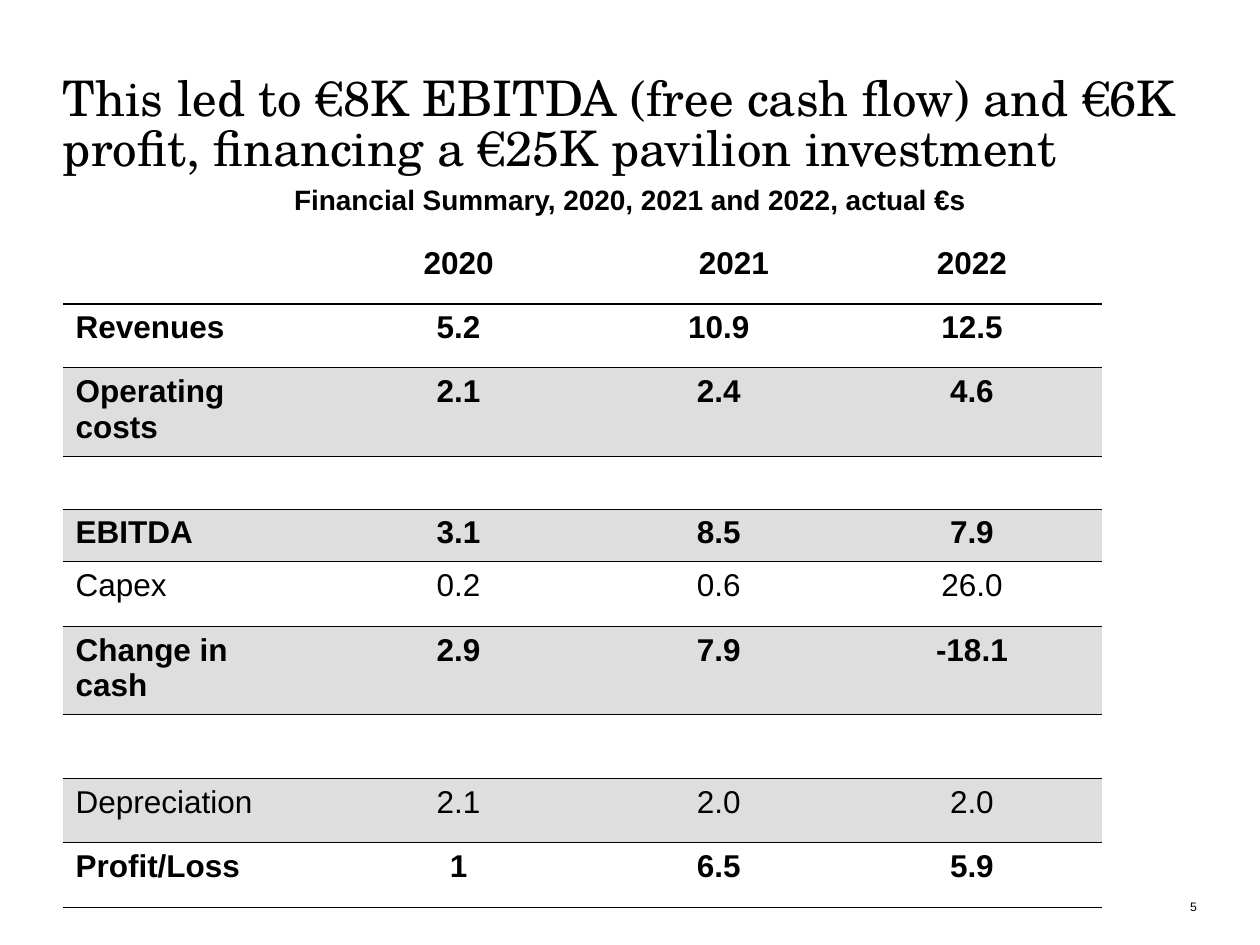
from lxml.etree import SubElement
from pptx import Presentation
from pptx.dml.color import RGBColor
from pptx.enum.text import MSO_ANCHOR as Anchor, PP_ALIGN as Align
from pptx.oxml.ns import qn
from pptx.util import Inches, Pt

BLACK = RGBColor(0x00, 0x00, 0x00)
GREY = RGBColor(0xDE, 0xDE, 0xDE)
SERIF = "TeX Gyre Schola"
SANS = "Arial"
GRID = Inches(0.5)
THIN, THICK = 0.5, 1.5

COLUMN_WIDTHS = [1.81, 2.66, 1.47, 0.23, 2.07]
ROW_HEIGHT, SHORT_ROW_HEIGHT = 0.51, 0.42
SHORT_ROWS = {3, 4}
SHADED_ROWS = {2, 4, 6, 8}
REGULAR_LABELS = {"Capex", "Depreciation"}
FINANCIALS = [
    ["", "2020", "2021", "", "2022"],
    ["Revenues", "5.2", "10.9", "", "12.5"],
    ["Operating costs", "2.1", "2.4", "", "4.6"],
    [""] * 5,
    ["EBITDA", "3.1", "8.5", "", "7.9"],
    ["Capex", "0.2", "0.6", "", "26.0"],
    ["Change in cash", "2.9", "7.9", "", "-18.1"],
    [""] * 5,
    ["Depreciation", "2.1", "2.0", "", "2.0"],
    ["Profit/Loss", "1", "6.5", "", "5.9"],
]


class SlideBuilder:
    def __init__(self, presentation):
        self.slide = presentation.slides.add_slide(presentation.slide_layouts[6])

    def add_text(self, frame, text, size, font=SANS, bold=False, align=Align.LEFT):
        paragraph = frame.paragraphs[0]
        paragraph.alignment = align
        run = paragraph.add_run()
        run.text = text
        run.font.name = font
        run.font.size = Pt(size)
        run.font.bold = bold
        run.font.color.rgb = BLACK
        return paragraph

    def text_box(self, column, row, columns, rows, text, size, anchor=Anchor.TOP, **style):
        box = [round(value * GRID) for value in (column, row, columns, rows)]
        frame = self.slide.shapes.add_textbox(*box).text_frame
        frame.word_wrap = True
        frame.vertical_anchor = anchor
        frame.margin_left = frame.margin_right = 0
        frame.margin_top = frame.margin_bottom = 0
        return self.add_text(frame, text, size, **style)

    def borders(self, cell, top, bottom):
        properties = cell._tc.get_or_add_tcPr()
        for side, width in (("L", 0), ("R", 0), ("T", top), ("B", bottom)):
            line = SubElement(properties, qn(f"a:ln{side}"), w=str(Pt(width)))
            if width:
                fill = SubElement(line, qn("a:solidFill"))
                SubElement(fill, qn("a:srgbClr"), val=str(BLACK))
            else:
                SubElement(line, qn("a:noFill"))

    def table(self, column, row, values):
        heights = [SHORT_ROW_HEIGHT if index in SHORT_ROWS else ROW_HEIGHT
                   for index in range(len(values))]
        table = self.slide.shapes.add_table(
            len(values), len(COLUMN_WIDTHS), round(column * GRID), round(row * GRID),
            Inches(sum(COLUMN_WIDTHS)), Inches(sum(heights))).table
        table.first_row = table.horz_banding = False
        for table_column, width in zip(table.columns, COLUMN_WIDTHS):
            table_column.width = Inches(width)
        for index, (table_row, height, texts) in enumerate(zip(table.rows, heights, values)):
            table_row.height = Inches(height)
            top = (0, THICK)[index] if index < 2 else THIN
            bottom = THIN if index else THICK
            for position, (cell, text) in enumerate(zip(table_row.cells, texts)):
                self.borders(cell, top, bottom)
                if index in SHADED_ROWS:
                    cell.fill.solid()
                    cell.fill.fore_color.rgb = GREY
                else:
                    cell.fill.background()
                if text:
                    self.add_text(cell.text_frame, text, 18,
                                  bold=texts[0] not in REGULAR_LABELS,
                                  align=Align.CENTER if position else Align.LEFT)
        table.cell(0, 2).merge(table.cell(0, 3))


def main():
    presentation = Presentation()
    presentation.slide_width, presentation.slide_height = 20 * GRID, 15 * GRID
    builder = SlideBuilder(presentation)
    title = builder.text_box(
        1, 1, 18, 1.8,
        "This led to €8K EBITDA (free cash flow) and €6K profit, "
        "financing a €25K pavilion investment",
        28, anchor=Anchor.BOTTOM, font=SERIF)
    title.line_spacing = 0.85
    builder.text_box(1, 2.9, 18, 0.7, "Financial Summary, 2020, 2021 and 2022, actual €s",
                     16, bold=True, align=Align.CENTER)
    builder.table(1, 3.8, FINANCIALS)
    builder.text_box(15.4, 14.2, 3.6, 0.3, "5", 7, anchor=Anchor.BOTTOM, align=Align.RIGHT)
    presentation.save("out.pptx")


if __name__ == "__main__":
    main()
